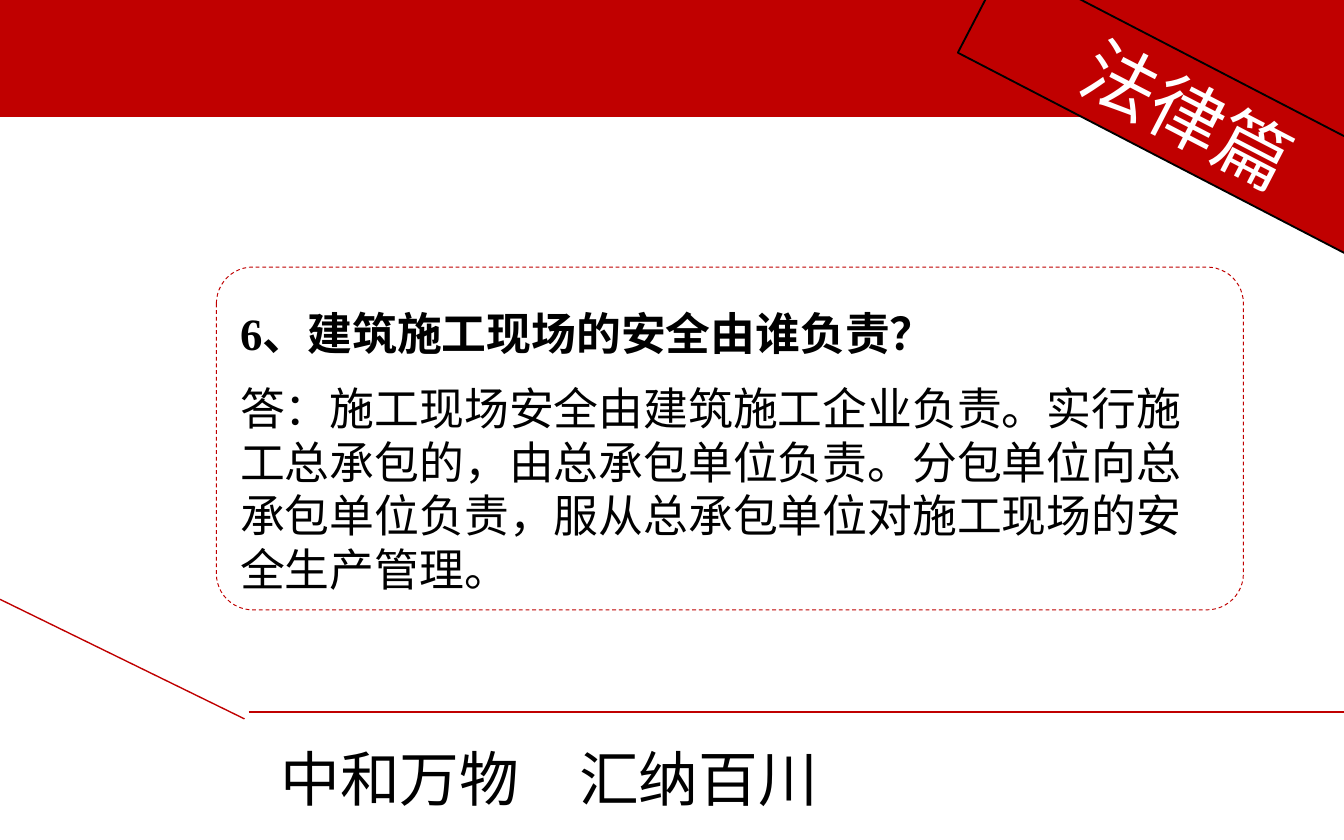
from dataclasses import dataclass
from typing import Optional

from lxml.etree import SubElement
from pptx import Presentation
from pptx.dml.color import RGBColor
from pptx.enum.dml import MSO_LINE_DASH_STYLE as Dash
from pptx.enum.shapes import MSO_CONNECTOR as Link, MSO_SHAPE as Preset
from pptx.enum.text import MSO_ANCHOR as Anchor, MSO_AUTO_SIZE as Fit, PP_ALIGN as Align
from pptx.oxml.ns import qn
from pptx.util import Cm, Pt

RED = RGBColor(0xC0, 0x00, 0x00)
BLACK = RGBColor(0x00, 0x00, 0x00)
WHITE = RGBColor(0xFF, 0xFF, 0xFF)
HAN_FONT = "Noto Sans CJK SC"


@dataclass
class Panel:
    """Placement in centimetres, with fill and outline."""
    left: float
    top: float
    width: float
    height: float
    fill: RGBColor
    preset: Preset = Preset.RECTANGLE
    turn: float = 0
    adjust: Optional[float] = None
    line: Optional[RGBColor] = None
    weight: float = 1


@dataclass
class Stroke:
    """End points of a red line in centimetres."""
    x1: float
    y1: float
    x2: float
    y2: float


HEADER = (
    Panel(-0.03, 0, 25.5, 2.21, RED, turn=180),
    Panel(21.08, 2.16, 4.37, 2.26, RED, Preset.RIGHT_TRIANGLE, 180),
)
HEADER[1].preset, HEADER[1].adjust = Preset.ISOSCELES_TRIANGLE, 0
ANSWER = Panel(4.09, 5.05, 19.41, 6.48, WHITE, Preset.ROUNDED_RECTANGLE,
               adjust=0.106, line=RED, weight=0.5)
BANNER = Panel(18.06, 1.17, 8.79, 1.96, RED, turn=27.4, line=BLACK)
FOOTER_LINES = (Stroke(4.7, 13.46, 25.48, 13.46), Stroke(0, 11.33, 4.62, 13.59))


def style_panel(shape, panel: Panel) -> None:
    places = {"left": panel.left, "top": panel.top,
              "width": panel.width, "height": panel.height}
    for name, value in places.items():
        setattr(shape, name, Cm(value))
    shape.rotation = panel.turn
    shape.fill.solid()
    shape.fill.fore_color.rgb = panel.fill
    if panel.line is None:
        shape.line.fill.background()
    else:
        shape.line.color.rgb = panel.line
        shape.line.width = Pt(panel.weight)


def add_panel(page, panel: Panel):
    shape = page.shapes.add_shape(panel.preset, 0, 0, Cm(1), Cm(1))
    shape.shadow.inherit = False
    style_panel(shape, panel)
    if panel.adjust is not None:
        shape.adjustments[0] = panel.adjust
    return shape


def add_stroke(page, stroke: Stroke) -> None:
    line = page.shapes.add_connector(
        Link.STRAIGHT, Cm(stroke.x1), Cm(stroke.y1), Cm(stroke.x2), Cm(stroke.y2))
    line.line.color.rgb = RED
    line.line.width = Pt(0.75)
    SubElement(line._element.spPr, qn("a:effectLst"))


def set_frame(frame, **changes) -> None:
    settings = {"word_wrap": True, "auto_size": Fit.NONE,
                "vertical_anchor": Anchor.MIDDLE} | changes
    for name, value in settings.items():
        setattr(frame, name, value)


def add_span(para, text: str, size: float, color: RGBColor = BLACK,
             font: str = HAN_FONT, bold: bool = False) -> None:
    span = para.add_run()
    span.text = text
    for name, value in {"name": font, "size": Pt(size), "bold": bold}.items():
        setattr(span.font, name, value)
    span.font.color.rgb = color
    SubElement(span.font._element, qn("a:ea")).set("typeface", HAN_FONT)


def build() -> None:
    deck = Presentation()
    deck.slide_width, deck.slide_height = Cm(25.4), Cm(15.88)
    page = deck.slides.add_slide(deck.slide_layouts[5])

    # Slogan at the foot
    slogan = page.shapes.add_textbox(Cm(5.05), Cm(13.89), Cm(12.24), Cm(1.63))
    set_frame(slogan.text_frame)
    add_span(slogan.text_frame.paragraphs[0], "中和万物　汇纳百川", 32)

    # Question and answer
    answer = add_panel(page, ANSWER)
    answer.line.dash_style = Dash.DASH
    frame = answer.text_frame
    set_frame(frame, margin_top=Cm(0.28))
    question, reply = frame.paragraphs[0], frame.add_paragraph()
    for para, spacing in ((question, 37), (reply, 28.6)):
        para.alignment = Align.LEFT
        para.line_spacing = Pt(spacing)
    question.space_after = Pt(12)
    add_span(question, "6、", 24, font="Times New Roman", bold=True)
    add_span(question, "建筑施工现场的安全由谁负责？", 24, font="Calibri", bold=True)
    add_span(reply, "答：施工现场安全由建筑施工企业负责。实行施工总承包的，"
                    "由总承包单位负责。分包单位向总承包单位负责，"
                    "服从总承包单位对施工现场的安全生产管理。", 24, font="Calibri")

    # Red header with its corner
    for panel in HEADER:
        add_panel(page, panel)

    # Slanted title banner, brought in front of the header
    title = page.shapes.title
    style_panel(title, BANNER)
    set_frame(title.text_frame)
    heading = title.text_frame.paragraphs[0]
    heading.alignment = Align.CENTER
    add_span(heading, "法律篇", 40, WHITE)
    page.shapes._spTree.append(title._element)

    # Lines above the slogan
    for stroke in FOOTER_LINES:
        add_stroke(page, stroke)

    deck.save("out.pptx")


if __name__ == "__main__":
    build()
